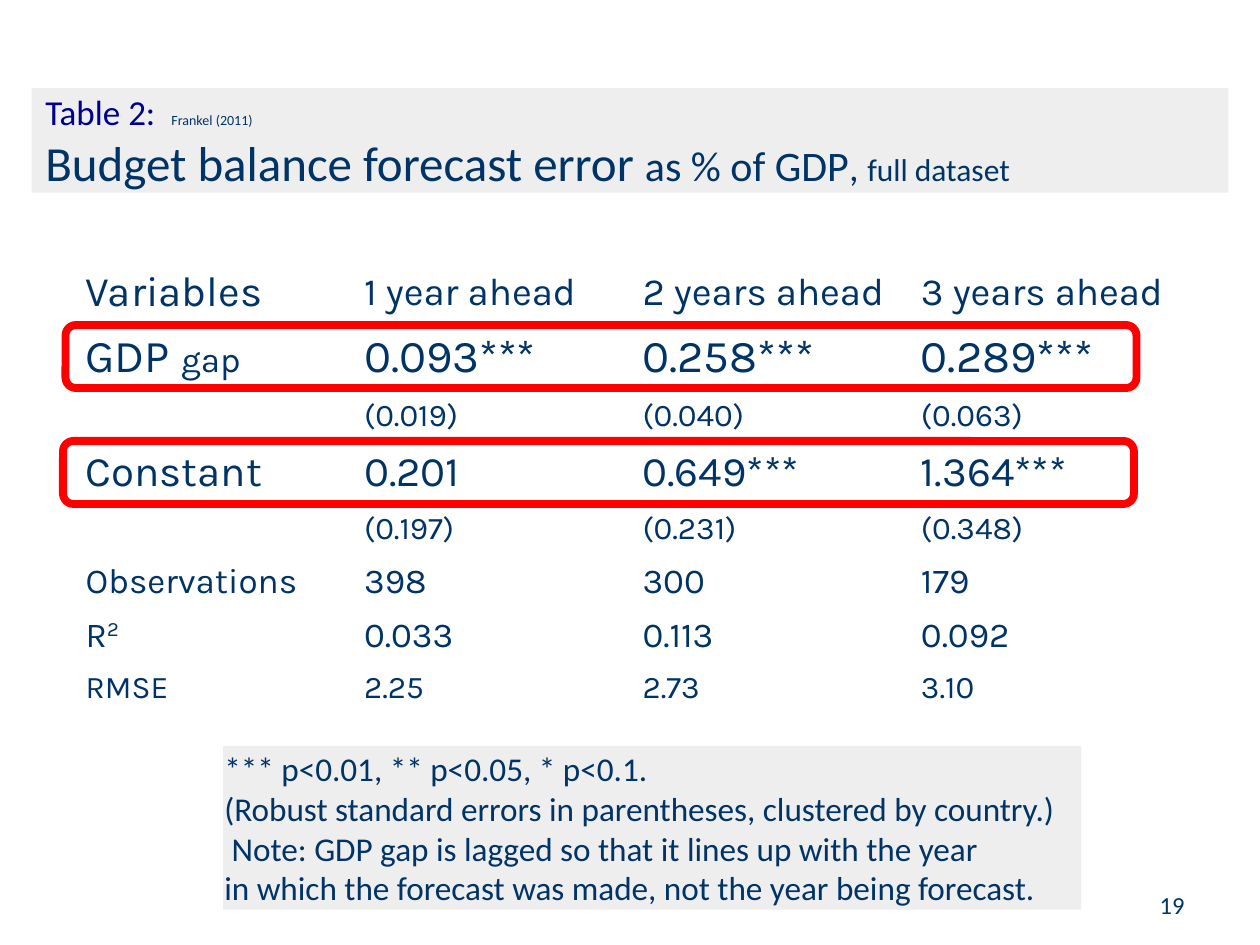
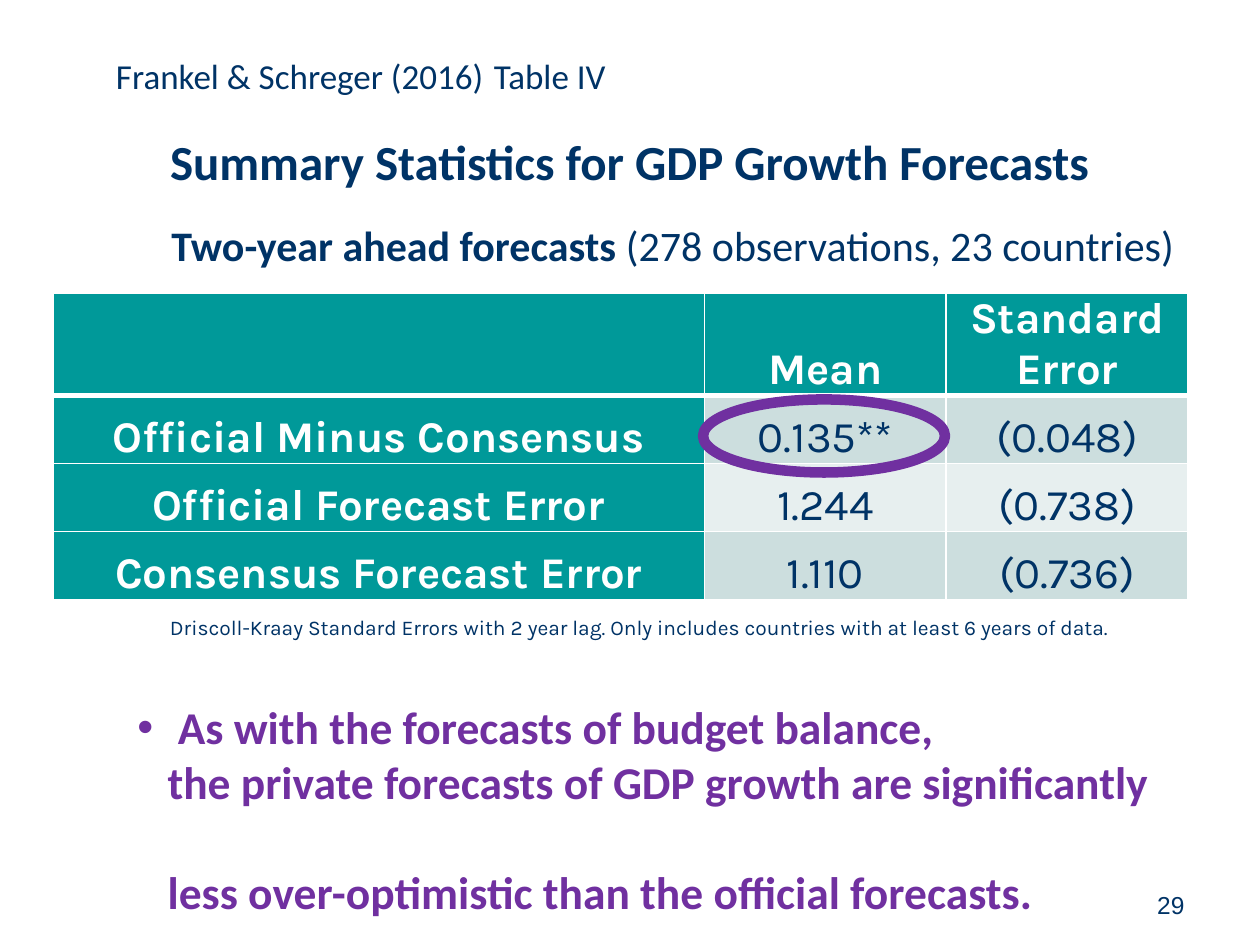
from dataclasses import dataclass

from lxml import etree
from pptx import Presentation
from pptx.dml.color import RGBColor
from pptx.enum.shapes import MSO_SHAPE
from pptx.enum.text import MSO_ANCHOR, MSO_AUTO_SIZE, PP_ALIGN
from pptx.oxml.ns import qn
from pptx.util import Inches, Pt

LEFT, CENTER, RIGHT = PP_ALIGN.LEFT, PP_ALIGN.CENTER, PP_ALIGN.RIGHT
TOP, MIDDLE, BOTTOM = MSO_ANCHOR.TOP, MSO_ANCHOR.MIDDLE, MSO_ANCHOR.BOTTOM
NO_FIT = MSO_AUTO_SIZE.NONE
RECT, ROUND_RECT, OVAL = MSO_SHAPE.RECTANGLE, MSO_SHAPE.ROUNDED_RECTANGLE, MSO_SHAPE.OVAL
TITLE_AND_BODY, TITLE_ONLY = 1, 5


@dataclass(frozen=True)
class Theme:
    text_font: str = "Calibri"
    table_font: str = "Karla"
    number_font: str = "Arial"
    navy: str = "003366"
    label_blue: str = "000090"
    band: str = "EEEEEE"
    red: str = "FF0000"
    purple: str = "7030A0"
    teal: str = "009999"
    teal_dim: str = "CCDEDE"
    teal_pale: str = "E7EFEF"
    white: str = "FFFFFF"
    credit: int = 8
    small: int = 12
    number: int = 14
    fine: int = 18
    note: int = 19
    normal: int = 20
    medium: int = 22
    large: int = 24
    cell: int = 25
    emphasis: int = 26
    heading: int = 28


T = Theme()

REGRESSION = [
    (0.5, T.large, T.medium, ["Variables", "1 year ahead", "2 years ahead", "3 years ahead"]),
    (0.53, T.emphasis, T.emphasis, ["GDP ", "0.093***", "0.258***", "0.289***"]),
    (0.4, T.fine, T.fine, ["", "(0.019)", "(0.040)", "(0.063)"]),
    (0.5, T.large, T.large, ["Constant", "0.201", "0.649***", "1.364***"]),
    (0.4, T.fine, T.fine, ["", "(0.197)", "(0.231)", "(0.348)"]),
    (0.43, T.normal, T.normal, ["Observations", "398", "300", "179"]),
    (0.43, T.normal, T.normal, ["R", "0.033", "0.113", "0.092"]),
    (0.4, T.fine, T.fine, ["RMSE", "2.25", "2.73", "3.10"]),
]

STATISTICS = [
    ["", "Mean", "Standard Error"],
    ["Official Minus Consensus", "0.135**", "(0.048)"],
    ["Official Forecast Error", "1.244", "(0.738)"],
    ["Consensus Forecast Error", "1.110", "(0.736)"],
]


def rgb(color):
    return RGBColor.from_string(color)


def box(left, top, width, height):
    return [Inches(v) for v in (left, top, width, height)]


def add_text(p, text, size, color=T.navy, font=T.text_font, bold=False):
    for i, line in enumerate(text.split("\n")):
        if i:
            p.add_line_break()
        r = p.add_run()
        r.text = line
        r.font.size = Pt(size)
        r.font.name = font
        r.font.bold = bold
        r.font.color.rgb = rgb(color)
    return r


def format_paragraph(p, align=LEFT, before=0, left=0, hanging=0, tabs=()):
    p.alignment = align
    p.space_before = Pt(before)
    pPr = p._p.get_or_add_pPr()
    pPr.set("marL", str(Inches(left)))
    pPr.set("indent", str(-Inches(hanging)))
    if tabs:
        tab_list = etree.SubElement(pPr, qn("a:tabLst"))
        for pos in tabs:
            etree.SubElement(tab_list, qn("a:tab"), pos=str(Inches(pos)), algn="l")


def set_frame(tf, anchor, inset=None):
    tf.word_wrap = True
    tf.auto_size = NO_FIT
    tf.vertical_anchor = anchor
    if inset is not None:
        tf.margin_left = tf.margin_right = tf.margin_top = tf.margin_bottom = Inches(inset)


def place(sp, position, anchor, inset=None):
    sp.left, sp.top, sp.width, sp.height = box(*position)
    set_frame(sp.text_frame, anchor, inset)
    return sp.text_frame


def fill_solid(target, color):
    target.fill.solid()
    target.fill.fore_color.rgb = rgb(color)


def add_label(s, position, text, size, font=T.text_font, align=LEFT, anchor=TOP):
    tf = s.shapes.add_textbox(*box(*position)).text_frame
    set_frame(tf, anchor)
    p = tf.paragraphs[0]
    add_text(p, text, size, font=font)
    p.alignment = align


def add_page_number(s, number, font):
    add_label(s, (7.17, 6.83, 2.33, 0.52), number, T.number, font, RIGHT, BOTTOM)


def add_note(s, position, text):
    sp = s.shapes.add_shape(RECT, *box(*position))
    sp.shadow.inherit = False
    fill_solid(sp, T.band)
    sp.line.fill.background()
    set_frame(sp.text_frame, MIDDLE, 0.01)
    p = sp.text_frame.paragraphs[0]
    add_text(p, text, T.note)
    p.alignment = LEFT


def add_outline(s, kind, position, color, width):
    sp = s.shapes.add_shape(kind, *box(*position))
    sp.shadow.inherit = False
    sp.fill.background()
    sp.line.color.rgb = rgb(color)
    sp.line.width = Pt(width)


def add_grid(s, position, widths, heights):
    table = s.shapes.add_table(len(heights), len(widths), *box(*position)).table
    table.first_row = table.horz_banding = False
    for column, width in zip(table.columns, widths):
        column.width = Inches(width)
    for row, height in zip(table.rows, heights):
        row.height = Inches(height)
    return table


def set_borders(cell, color, **widths):
    tcPr = cell._tc.get_or_add_tcPr()
    for side in "LRTB":
        ln = etree.SubElement(tcPr, qn("a:ln" + side), w=str(Pt(widths.get(side, 1))))
        solid = etree.SubElement(ln, qn("a:solidFill"))
        etree.SubElement(solid, qn("a:srgbClr"), val=color)


def add_regression_table(s):
    heights = [row[0] for row in REGRESSION]
    table = add_grid(s, (0.58, 2.07, 8.83, 3.6), [2.21] * 4, heights)
    for i, (_, name_size, value_size, texts) in enumerate(REGRESSION):
        for j, text in enumerate(texts):
            cell = table.cell(i, j)
            cell.fill.background()
            cell.vertical_anchor = MIDDLE
            p = cell.text_frame.paragraphs[0]
            add_text(p, text, value_size if j else name_size, font=T.table_font)
    add_text(table.cell(1, 0).text_frame.paragraphs[0], "gap", T.normal, font=T.table_font)
    r = add_text(table.cell(6, 0).text_frame.paragraphs[0], "2", T.normal, font=T.table_font)
    r._r.get_or_add_rPr().set("baseline", "30000")


def add_statistics_table(s):
    table = add_grid(s, (0.42, 2.33, 9, 2.45), [5.17, 1.92, 1.92], [0.81] + [0.54] * 3)
    for i, texts in enumerate(STATISTICS):
        for j, text in enumerate(texts):
            cell = table.cell(i, j)
            header = i == 0 or j == 0
            set_borders(cell, T.white, T=3 if i == 1 else 1, B=3 if i == 0 else 1)
            fill_solid(cell, T.teal if header else T.teal_dim if i % 2 else T.teal_pale)
            cell.vertical_anchor = BOTTOM
            cell.margin_left = cell.margin_right = Inches(0.07)
            cell.margin_top = cell.margin_bottom = 0
            p = cell.text_frame.paragraphs[0]
            add_text(p, text, T.cell, T.white if header else T.navy, T.table_font, header)
            p.alignment = CENTER


def build_budget_slide(prs):
    s = prs.slides.add_slide(prs.slide_layouts[TITLE_ONLY])
    title = s.shapes.title
    fill_solid(title, T.band)
    tf = place(title, (0.25, 0.7, 9.5, 0.83), MIDDLE, 0.01)
    p = tf.paragraphs[0]
    format_paragraph(p, left=0.1, tabs=[5.25])
    add_text(p, "Table 2:\t", T.normal, T.label_blue)
    add_text(p, "Frankel (2011)", T.credit)
    p = tf.add_paragraph()
    format_paragraph(p, left=0.1)
    add_text(p, "Budget balance forecast error ", T.heading)
    add_text(p, "as % of GDP", T.large)
    add_text(p, ", ", T.medium)
    add_text(p, "full dataset", T.fine)

    add_regression_table(s)
    add_note(s, (1.77, 5.92, 6.81, 1.3),
             "*** p<0.01, ** p<0.05, * p<0.1.\n"
             "(Robust standard errors in parentheses, clustered by country.)\n"
             " Note: GDP gap is lagged so that it lines up with the year\n"
             "in which the forecast was made, not the year being forecast.")
    for left, top in ((0.5, 3.5), (0.52, 2.58)):
        add_outline(s, ROUND_RECT, (left, top, 8.5, 0.5), T.red, 4.5)
    add_page_number(s, "19", T.text_font)


def build_growth_slide(prs):
    s = prs.slides.add_slide(prs.slide_layouts[TITLE_AND_BODY])
    tf = place(s.shapes.title, (0.32, 0.38, 9.18, 1.97), TOP)
    p = tf.paragraphs[0]
    format_paragraph(p, tabs=[2.65, 5.95])
    add_text(p, "\tFrankel & Schreger (2016)\tTable IV", T.normal)
    p = tf.add_paragraph()
    format_paragraph(p, CENTER, before=20, left=0.17)
    add_text(p, "Summary Statistics for GDP Growth Forecasts", T.heading, bold=True)
    p = tf.add_paragraph()
    format_paragraph(p, CENTER, before=17, left=0.86)
    add_text(p, "Two-year ahead forecasts ", T.large, bold=True)
    add_text(p, "(278 observations, 23 countries)", T.large)

    add_statistics_table(s)
    add_label(s, (1.25, 4.83, 7.83, 0.3),
              "Driscoll-Kraay Standard Errors with 2 year lag. "
              "Only includes countries with at least 6 years of data.",
              T.small, T.table_font)
    add_outline(s, OVAL, (5.58, 3.17, 1.92, 0.58), T.purple, 6)

    tf = place(s.placeholders[1], (0.99, 5.5, 8.26, 1.85), TOP)
    p = tf.paragraphs[0]
    format_paragraph(p, left=0.24, hanging=0.24)
    add_text(p, " As with the forecasts of budget balance,\n"
                "the private forecasts of GDP growth are significantly",
             T.emphasis, T.purple, bold=True)
    p = tf.add_paragraph()
    format_paragraph(p, before=32, left=0.24)
    etree.SubElement(p._p.get_or_add_pPr(), qn("a:buNone"))
    add_text(p, "less over-optimistic than the official forecasts.",
             T.emphasis, T.purple, bold=True)
    add_page_number(s, "29", T.number_font)


def main():
    prs = Presentation()
    prs.slide_width, prs.slide_height = Inches(10), Inches(7.5)
    build_budget_slide(prs)
    build_growth_slide(prs)
    prs.save("out.pptx")


if __name__ == "__main__":
    main()
